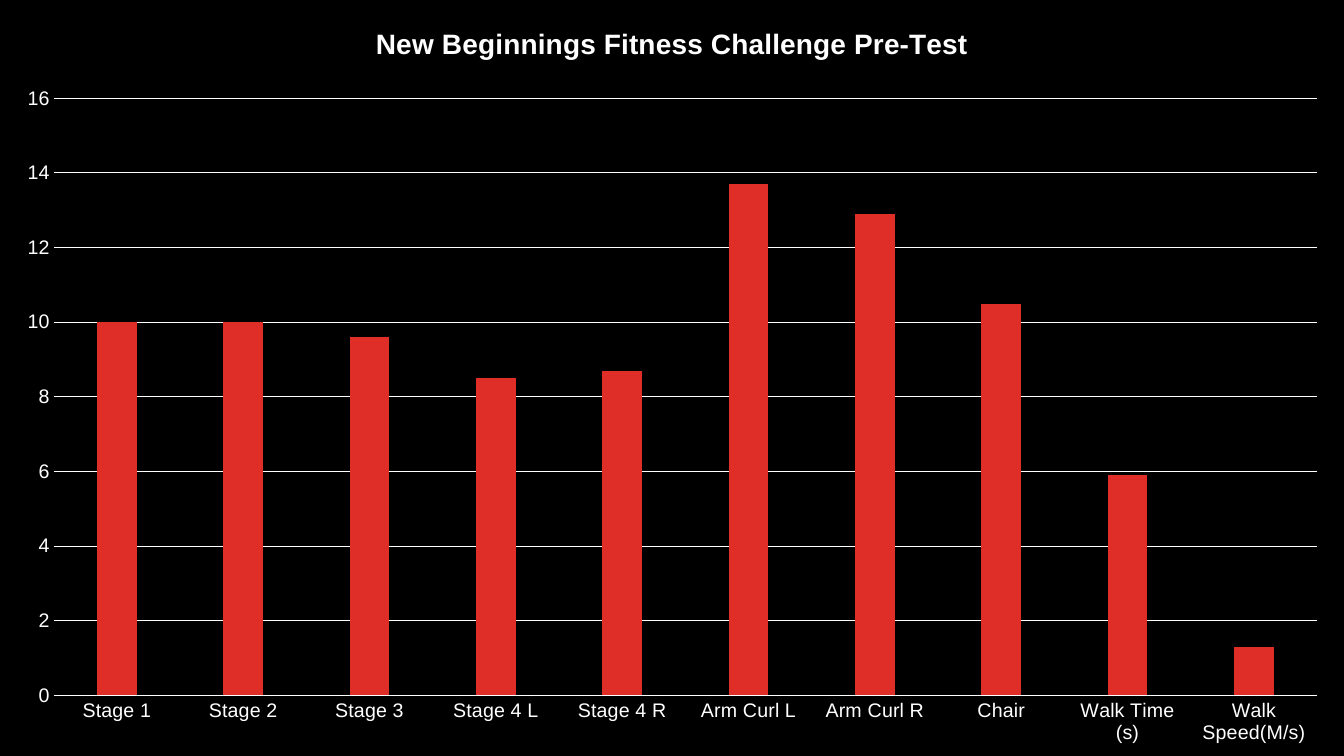
from pptx import Presentation
from pptx.chart.data import CategoryChartData
from pptx.dml.color import RGBColor
from pptx.enum.chart import XL_CHART_TYPE as ChartType, XL_TICK_MARK as TickMark
from pptx.oxml import parse_xml
from pptx.oxml.ns import nsdecls, qn
from pptx.util import Pt

TITLE = "New Beginnings Fitness Challenge Pre-Test"
SERIES_NAME = "Series 1"
SCORES = {
    "Stage 1": 10,
    "Stage 2": 10,
    "Stage 3": 9.6,
    "Stage 4 L": 8.5,
    "Stage 4 R": 8.7,
    "Arm Curl L": 13.7,
    "Arm Curl R": 12.9,
    "Chair": 10.5,
    "Walk Time (s)": 5.9,
    "Walk Speed(M/s)": 1.3,
}
BLACK, WHITE, RED = "000000", "FFFFFF", "DF2E28"
FONT = "Arial"
WIDTH, HEIGHT = Pt(960), Pt(540)
PLOT_AREA = {"x": 0.04, "y": 0.13, "w": 0.94, "h": 0.79}  # shares of the chart


def paint(fill, color):
    fill.solid()
    fill.fore_color.rgb = RGBColor.from_string(color)


def style_font(font, size, bold=False):
    font.name, font.size, font.bold = FONT, Pt(size), bold
    font.color.rgb = RGBColor.from_string(WHITE)


def style_line(line):
    paint(line.fill, WHITE)
    line.width = Pt(0.75)


def place_plot_area(chart):
    """Fix the inner plot area, which python-pptx cannot set itself."""
    plot_area = chart.element.find(".//" + qn("c:plotArea"))
    for layout in plot_area.findall(qn("c:layout")):
        plot_area.remove(layout)
    modes = "".join(f'<c:{side}Mode val="edge"/>' for side in "xy")
    sizes = "".join(f'<c:{key} val="{share}"/>' for key, share in PLOT_AREA.items())
    plot_area.insert(0, parse_xml(
        f'<c:layout {nsdecls("c")}><c:manualLayout><c:layoutTarget val="inner"/>'
        f"{modes}{sizes}</c:manualLayout></c:layout>"))


def add_score_chart(slide):
    data = CategoryChartData()
    data.categories = list(SCORES)
    data.add_series(SERIES_NAME, list(SCORES.values()))
    chart = slide.shapes.add_chart(
        ChartType.COLUMN_CLUSTERED, 0, 0, WIDTH, HEIGHT, data).chart
    style_font(chart.font, 14)
    chart.has_legend = False

    run = chart.chart_title.text_frame.paragraphs[0].add_run()
    run.text = TITLE
    style_font(run.font, 20, bold=True)
    chart.chart_title.include_in_layout = False

    plot = chart.plots[0]
    plot.gap_width, plot.overlap = 219, -27
    plot.vary_by_categories = False
    paint(plot.series[0].format.fill, RED)

    category_axis, value_axis = chart.category_axis, chart.value_axis
    for axis in (category_axis, value_axis):
        axis.major_tick_mark = axis.minor_tick_mark = TickMark.NONE
        style_font(axis.tick_labels.font, 14)
    style_line(category_axis.format.line)
    value_axis.format.line.fill.background()
    value_axis.minimum_scale, value_axis.maximum_scale = 0, 16
    value_axis.major_unit = 2
    value_axis.has_major_gridlines = True
    style_line(value_axis.major_gridlines.format.line)
    place_plot_area(chart)


def main():
    presentation = Presentation()
    presentation.slide_width, presentation.slide_height = WIDTH, HEIGHT
    slide = presentation.slides.add_slide(presentation.slide_layouts[6])
    paint(slide.background.fill, BLACK)
    add_score_chart(slide)
    presentation.save("out.pptx")


if __name__ == "__main__":
    main()
